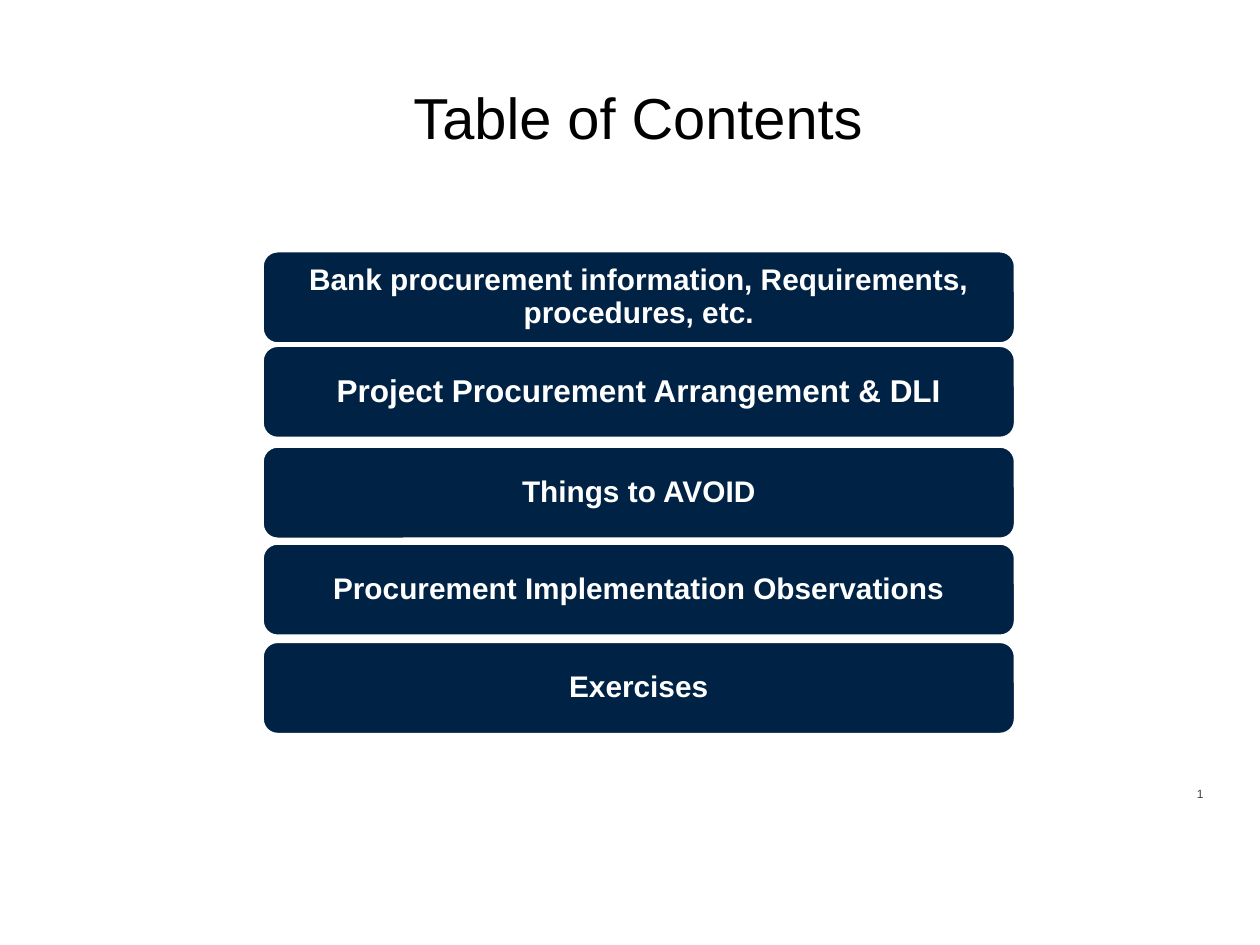
"""Build a table of contents slide with five stacked topic bars."""
import pptx
import pptx.dml.color
import pptx.enum.shapes
import pptx.enum.text
import pptx.util

Inches = pptx.util.Inches
Align = pptx.enum.text.PP_ALIGN
Anchor = pptx.enum.text.MSO_ANCHOR

THEME = {
    "font": "Arial",
    "black": "000000", "grey": "404040", "navy": "002345", "white": "FFFFFF",
    "title_size": 33, "topic_size": 17, "large_topic_size": 18, "number_size": 6.8,
    "outline": 2,
}
TITLE = "Table of Contents"
PAGE_NUMBER = "1"
TOPICS = [
    ("Bank procurement information, Requirements, procedures, etc.", 1.99, "topic_size"),
    ("Project Procurement Arrangement & DLI", 2.74, "large_topic_size"),
    ("Things to AVOID", 3.54, "topic_size"),
    ("Procurement Implementation Observations", 4.31, "topic_size"),
    ("Exercises", 5.09, "topic_size"),
]
BAR_LEFT, BAR_WIDTH, BAR_HEIGHT = 2.08, 5.98, 0.74


def color(name):
    """Return a theme colour."""
    return pptx.dml.color.RGBColor.from_string(THEME[name])


def write(shape, text, size, color_name, insets, anchor, alignment, bold=False):
    """Set and format the single paragraph of a shape."""
    frame = shape.text_frame
    frame.text = text
    frame.word_wrap = True
    frame.auto_size = pptx.enum.text.MSO_AUTO_SIZE.NONE
    frame.vertical_anchor = anchor
    (frame.margin_left, frame.margin_top,
     frame.margin_right, frame.margin_bottom) = map(Inches, insets)
    paragraph = frame.paragraphs[0]
    paragraph.alignment = alignment
    font = paragraph.runs[0].font
    font.name = THEME["font"]
    font.size = pptx.util.Pt(THEME[size])
    font.bold = bold
    font.color.rgb = color(color_name)
    return paragraph


def add_topic(slide, text, top, size):
    """Add one rounded topic bar."""
    bar = slide.shapes.add_shape(
        pptx.enum.shapes.MSO_SHAPE.ROUNDED_RECTANGLE,
        *map(Inches, (BAR_LEFT, top, BAR_WIDTH, BAR_HEIGHT)))
    bar.shadow.inherit = False
    bar.fill.solid()
    bar.fill.fore_color.rgb = color("navy")
    bar.line.color.rgb = color("white")
    bar.line.width = pptx.util.Pt(THEME["outline"])
    paragraph = write(bar, text, size, "white", (0.07, 0.04, 0.07, 0.04),
                      Anchor.MIDDLE, Align.CENTER, bold=True)
    paragraph.line_spacing = 0.9


def main():
    """Create and save the presentation."""
    presentation = pptx.Presentation()
    presentation.slide_width = Inches(10)
    presentation.slide_height = Inches(7.5)
    slide = presentation.slides.add_slide(presentation.slide_layouts[5])

    title = slide.shapes.title
    title.left, title.top, title.width, title.height = map(Inches, (1.44, 0.6, 7.25, 0.62))
    write(title, TITLE, "title_size", "black", (0, 0, 0, 0.02), Anchor.BOTTOM, Align.CENTER)

    for topic in TOPICS:
        add_topic(slide, *topic)

    number = slide.shapes.add_textbox(*map(Inches, (9.5, 6.2, 0.26, 0.3)))
    write(number, PAGE_NUMBER, "number_size", "grey", (0, 0.04, 0, 0), Anchor.TOP, Align.LEFT)

    presentation.save("out.pptx")


if __name__ == "__main__":
    main()
